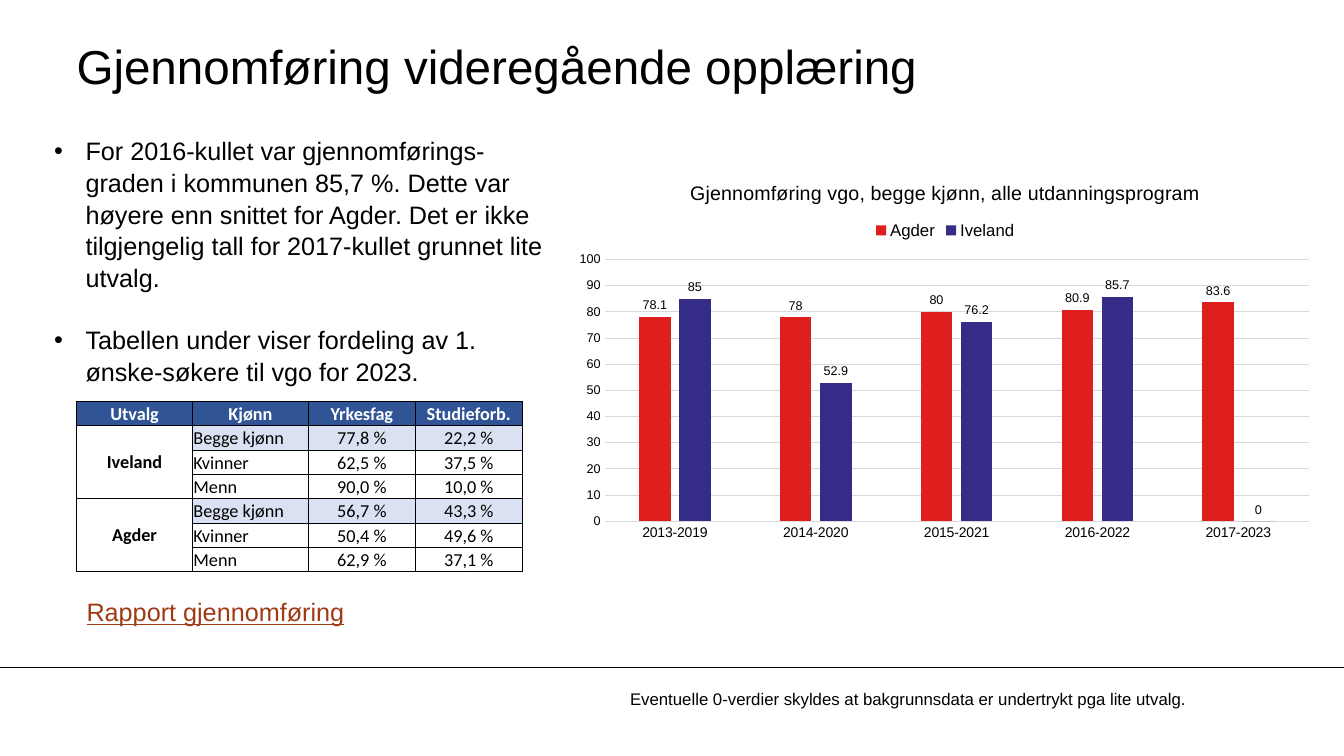
from lxml import etree
from pptx import Presentation
from pptx.chart.data import CategoryChartData
from pptx.dml.color import RGBColor
from pptx.enum.chart import XL_CHART_TYPE, XL_LABEL_POSITION, XL_LEGEND_POSITION, XL_TICK_MARK
from pptx.enum.shapes import MSO_CONNECTOR
from pptx.enum.text import MSO_ANCHOR, PP_ALIGN
from pptx.oxml import parse_xml
from pptx.oxml.ns import nsdecls, qn
from pptx.util import Inches, Pt

WIDTH, HEIGHT = Inches(13.33), Inches(7.5)
BLACK = RGBColor(0x00, 0x00, 0x00)
WHITE = RGBColor(0xFF, 0xFF, 0xFF)
HEADER_BLUE = RGBColor(0x30, 0x54, 0x96)
TOTAL_BLUE = RGBColor(0xD9, 0xE1, 0xF2)
GRID_GREY = RGBColor(0xD9, 0xD9, 0xD9)
LINK_RUST = RGBColor(0x9F, 0x3A, 0x14)
CLUSTERED = XL_CHART_TYPE.COLUMN_CLUSTERED
OUTSIDE_END = XL_LABEL_POSITION.OUTSIDE_END
LEGEND_TOP = XL_LEGEND_POSITION.TOP
NO_TICKS = XL_TICK_MARK.NONE
STRAIGHT = MSO_CONNECTOR.STRAIGHT
MIDDLE, BOTTOM = MSO_ANCHOR.MIDDLE, MSO_ANCHOR.BOTTOM
LEFT, CENTER = PP_ALIGN.LEFT, PP_ALIGN.CENTER

BULLETS = [
    "For 2016-kullet var gjennomførings-graden i kommunen 85,7 %. Dette var høyere enn "
    "snittet for Agder. Det er ikke tilgjengelig tall for 2017-kullet grunnet lite utvalg.",
    "Tabellen under viser fordeling av 1. ønske-søkere til vgo for 2023.",
]
HEADINGS = ["Utvalg", "Kjønn", "Yrkesfag", "Studieforb."]
APPLICANTS = {
    "Iveland": [("Begge kjønn", "77,8 %", "22,2 %"),
                ("Kvinner", "62,5 %", "37,5 %"),
                ("Menn", "90,0 %", "10,0 %")],
    "Agder": [("Begge kjønn", "56,7 %", "43,3 %"),
              ("Kvinner", "50,4 %", "49,6 %"),
              ("Menn", "62,9 %", "37,1 %")],
}
COHORTS = ["2013-2019", "2014-2020", "2015-2021", "2016-2022", "2017-2023"]
COMPLETION = [
    ("Agder", (78.1, 78, 80, 80.9, 83.6), RGBColor(0xDF, 0x1F, 0x1D)),
    ("Iveland", (85, 52.9, 76.2, 85.7, 0), RGBColor(0x34, 0x2C, 0x86)),
]


def region(left, top, width, height):
    """Turn percentages of the slide into a box of lengths."""
    return (int(WIDTH * left / 100), int(HEIGHT * top / 100),
            int(WIDTH * width / 100), int(HEIGHT * height / 100))


def style_font(font, size, color=BLACK, name="Arial", bold=False):
    """Apply typeface, size, colour and weight to a font."""
    font.name, font.size, font.bold = name, Pt(size), bold
    font.color.rgb = color


def add_text(slide, box, text, size, color=BLACK):
    """Place one line of text and return its frame."""
    frame = slide.shapes.add_textbox(*box).text_frame
    frame.word_wrap = True
    frame.text = text
    style_font(frame.paragraphs[0].font, size, color)
    return frame


def add_heading(slide, box):
    """Place the slide heading flush with its box."""
    frame = add_text(slide, box, "Gjennomføring videregående opplæring", 34)
    frame.margin_left = frame.margin_right = frame.margin_top = frame.margin_bottom = 0
    frame.vertical_anchor = MIDDLE


def add_bullets(slide, box):
    """Place the bulleted findings."""
    frame = slide.shapes.add_textbox(*box).text_frame
    frame.word_wrap = True
    indent = int(WIDTH * 0.0233)
    for index, finding in enumerate(BULLETS):
        paragraph = frame.paragraphs[0] if index == 0 else frame.add_paragraph()
        paragraph.text = finding
        paragraph.line_spacing = 1.05
        if index:
            paragraph.space_before = Pt(21.8)
        properties = paragraph._p.get_or_add_pPr()
        properties.set("marL", str(indent))
        properties.set("indent", str(-indent))
        etree.SubElement(properties, qn("a:buFont")).set("typeface", "Arial")
        etree.SubElement(properties, qn("a:buChar")).set("char", "•")
        style_font(paragraph.font, 18)


def fill_cell(cell, text, fill, color=BLACK, bold=False, align=CENTER, anchor=BOTTOM):
    """Write, border and colour one table cell."""
    cell.text = text
    cell.vertical_anchor = anchor
    cell.margin_left = cell.margin_right = cell.margin_top = Inches(0.01)
    cell.margin_bottom = 0
    properties = cell._tc.get_or_add_tcPr()
    for side in "LRTB":
        properties.append(parse_xml(
            f'<a:ln{side} {nsdecls("a")} w="{Pt(0.5)}"><a:solidFill>'
            f'<a:srgbClr val="{BLACK}"/></a:solidFill></a:ln{side}>'))
    cell.fill.solid()
    cell.fill.fore_color.rgb = fill
    paragraph = cell.text_frame.paragraphs[0]
    paragraph.alignment = align
    style_font(paragraph.font, 13, color, "Calibri", bold)


def add_applicant_table(slide, box):
    """Place the table of applicants by area and gender."""
    rows = [(area if index == 0 else "", *figures)
            for area, group in APPLICANTS.items() for index, figures in enumerate(group)]
    table = slide.shapes.add_table(len(rows) + 1, len(HEADINGS), *box).table
    for column, share in zip(table.columns, (0.26, 0.26, 0.24, 0.24)):
        column.width = int(box[2] * share)
    for row in table.rows:
        row.height = box[3] // (len(rows) + 1)
    for column, heading in enumerate(HEADINGS):
        fill_cell(table.cell(0, column), heading, HEADER_BLUE, WHITE, bold=True)
    for row, (area, gender, *percentages) in enumerate(rows, 1):
        fill_cell(table.cell(row, 0), area, WHITE, bold=True, anchor=MIDDLE)
        fill = TOTAL_BLUE if area else WHITE
        fill_cell(table.cell(row, 1), gender, fill, align=LEFT)
        for column, percentage in enumerate(percentages, 2):
            fill_cell(table.cell(row, column), percentage, fill)
        if area:
            table.cell(row, 0).merge(table.cell(row + len(APPLICANTS[area]) - 1, 0))


def set_plot_area(chart, **shares):
    """Fix the inner plot area as shares of the chart."""
    plot_area = chart._chartSpace.chart.plotArea
    for layout in plot_area.findall(qn("c:layout")):
        plot_area.remove(layout)
    lengths = "".join(f'<c:{key} val="{share}"/>' for key, share in shares.items())
    plot_area.insert(0, parse_xml(
        f'<c:layout {nsdecls("c")}><c:manualLayout><c:layoutTarget val="inner"/>'
        f'<c:xMode val="edge"/><c:yMode val="edge"/>{lengths}</c:manualLayout></c:layout>'))


def add_completion_chart(slide, box):
    """Place the column chart of completion by cohort."""
    data = CategoryChartData()
    data.categories = COHORTS
    for area, rates, _ in COMPLETION:
        data.add_series(area, rates)
    chart = slide.shapes.add_chart(CLUSTERED, *box, data).chart
    style_font(chart.font, 10)
    chart.has_title = True
    title = chart.chart_title.text_frame
    title.text = "Gjennomføring vgo, begge kjønn, alle utdanningsprogram"
    style_font(title.paragraphs[0].font, 14)
    chart.has_legend = True
    chart.legend.position = LEGEND_TOP
    chart.legend.include_in_layout = False
    style_font(chart.legend.font, 12)
    for axis, size in ((chart.category_axis, 10), (chart.value_axis, 9)):
        axis.major_tick_mark = axis.minor_tick_mark = NO_TICKS
        style_font(axis.tick_labels.font, size)
    rates_axis = chart.value_axis
    rates_axis.minimum_scale, rates_axis.maximum_scale, rates_axis.major_unit = 0, 100, 10
    rates_axis.tick_labels.number_format = "#,##0"
    rates_axis.tick_labels.number_format_is_linked = False
    rates_axis.format.line.fill.background()
    for line in (chart.category_axis.format.line, rates_axis.major_gridlines.format.line):
        line.color.rgb, line.width = GRID_GREY, Pt(0.75)
    plot = chart.plots[0]
    plot.vary_by_categories = False
    plot.gap_width, plot.overlap = 219, -27
    for series, (_, _, color) in zip(plot.series, COMPLETION):
        series.format.fill.solid()
        series.format.fill.fore_color.rgb = color
        labels = series.data_labels
        labels.show_value, labels.position = True, OUTSIDE_END
        style_font(labels.font, 9)
    set_plot_area(chart, x=0.05, y=0.25, w=0.93, h=0.68)


def add_footer_rule(slide, box):
    """Draw the rule along the top of the footer."""
    left, top, width, _ = box
    rule = slide.shapes.add_connector(STRAIGHT, left, top, left + width, top)
    rule.line.color.rgb, rule.line.width = BLACK, Pt(0.75)
    etree.SubElement(rule._element.spPr, qn("a:effectLst"))


def main():
    """Build and save the slide."""
    deck = Presentation()
    deck.slide_width, deck.slide_height = WIDTH, HEIGHT
    slide = deck.slides.add_slide(deck.slide_layouts[6])
    add_footer_rule(slide, region(0, 88.27, 100, 11.73))
    add_heading(slide, region(5.7, 3.6, 83.27, 10))
    add_bullets(slide, region(3.3, 17.07, 38.78, 33.6))
    add_applicant_table(slide, region(5.7, 53.07, 33.16, 22.53))
    add_text(slide, region(46.14, 90.4, 43.89, 4),
             "Eventuelle 0-verdier skyldes at bakgrunnsdata er undertrykt pga lite utvalg.", 12)
    report = add_text(slide, region(5.7, 78.27, 21.08, 5.33), "Rapport gjennomføring", 18, LINK_RUST)
    report.paragraphs[0].font.underline = True
    add_completion_chart(slide, region(42.16, 21.6, 56.34, 50.93))
    deck.save("out.pptx")


if __name__ == "__main__":
    main()
